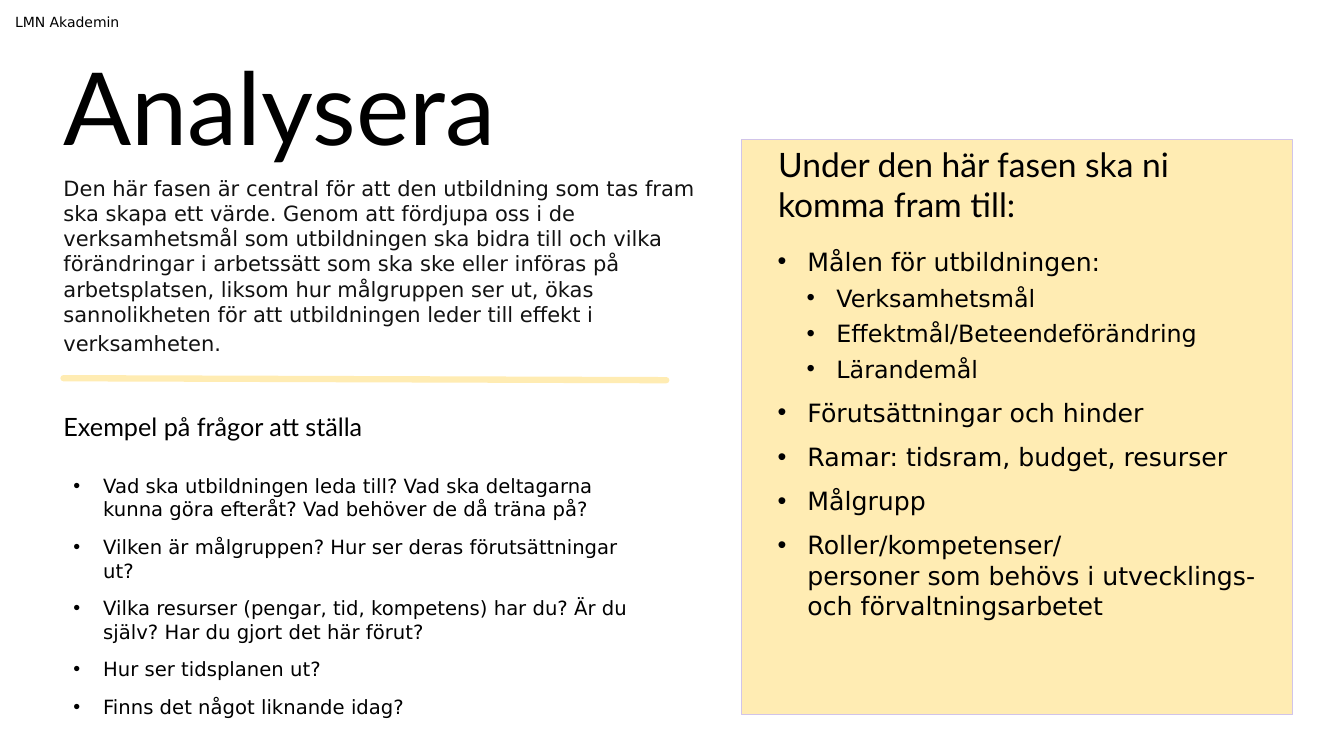
from dataclasses import dataclass

from lxml import etree
from pptx import Presentation
from pptx import util as u
from pptx.dml.color import RGBColor
from pptx.enum import shapes, text
from pptx.oxml import ns


@dataclass(frozen=True)
class Theme:
    ink: str = "000000"
    soft_ink: str = "121212"
    panel: str = "FFECB3"
    panel_edge: str = "D1C4E9"
    heading_font: str = "Lato"
    body_font: str = "DejaVu Sans"
    title: float = 72
    panel_heading: float = 24
    heading: float = 18
    result: float = 18
    sub_result: float = 17
    intro: float = 15
    question: float = 14
    label: float = 10


THEME = Theme()
NBSP = chr(160)

INTRO = (
    "Den här fasen är central för att den utbildning som tas fram ska skapa ett värde. "
    "Genom att fördjupa oss i de verksamhetsmål som utbildningen ska bidra till och vilka "
    "förändringar i arbetssätt som ska ske eller införas på arbetsplatsen, liksom hur "
    "målgruppen ser ut, ökas sannolikheten för att utbildningen leder till effekt i "
    "verksamheten."
)
# Each result is its level and its wording
RESULTS = [
    (0, "Målen för utbildningen:"),
    (1, "Verksamhetsmål"),
    (1, "Effektmål/Beteendeförändring"),
    (1, "Lärandemål"),
    (0, "Förutsättningar och hinder"),
    (0, "Ramar: tidsram, budget, resurser"),
    (0, "Målgrupp"),
    (0, "Roller/kompetenser/"
        + "personer som behövs i utvecklings-".replace(" ", NBSP)
        + " och" + NBSP + "förvaltningsarbetet"),
]
QUESTIONS = [
    (0, "Vad ska utbildningen leda till? Vad ska deltagarna kunna göra efteråt? "
        "Vad behöver de då träna på?"),
    (0, "Vilken är målgruppen? Hur ser deras förutsättningar ut?"),
    (0, "Vilka resurser (pengar, tid, kompetens) har du? Är du själv? "
        "Har du gjort det här förut?"),
    (0, "Hur ser tidsplanen ut?"),
    (0, "Finns det något liknande idag?"),
]


def apply(target, values):
    for name, value in values.items():
        setattr(target, name, value)


def lengths(*values):
    return [u.Cm(value) for value in values]


def prepare_frame(frame, side=0, top=0):
    apply(frame, {
        "word_wrap": True,
        "auto_size": text.MSO_AUTO_SIZE.NONE,
        "vertical_anchor": text.MSO_ANCHOR.TOP,
        "margin_left": u.Cm(side), "margin_right": u.Cm(side),
        "margin_top": u.Cm(top), "margin_bottom": u.Cm(top),
    })


def add_run(paragraph, wording, size, font, color=THEME.ink):
    run = paragraph.add_run()
    run.text = wording
    apply(run.font, {"size": u.Pt(size), "name": font})
    run.font.color.rgb = RGBColor.from_string(color)


def add_title(slide, wording, box):
    title = slide.shapes.title
    apply(title, dict(zip(("left", "top", "width", "height"), lengths(*box))))
    prepare_frame(title.text_frame)
    paragraph = title.text_frame.paragraphs[0]
    paragraph.alignment = text.PP_ALIGN.LEFT
    add_run(paragraph, wording, THEME.title, THEME.heading_font)


def add_text(slide, wording, box, size, font, color=THEME.ink):
    frame = slide.shapes.add_textbox(*lengths(*box)).text_frame
    prepare_frame(frame)
    add_run(frame.paragraphs[0], wording, size, font, color)
    return frame.paragraphs[0]


def add_bullets(slide, entries, box, sizes):
    frame = slide.shapes.add_textbox(*lengths(*box)).text_frame
    prepare_frame(frame, side=0.25, top=0.13)
    for index, (level, wording) in enumerate(entries):
        paragraph = frame.add_paragraph() if index else frame.paragraphs[0]
        apply(paragraph, {"level": level, "space_before": u.Pt((10, 5)[level])})
        properties = paragraph._p.get_or_add_pPr()
        properties.set("marL", str(u.Cm((0.75, 1.48)[level])))
        properties.set("indent", str(-u.Cm(0.75)))
        etree.SubElement(properties, ns.qn("a:buFont")).set("typeface", "Arial")
        etree.SubElement(properties, ns.qn("a:buChar")).set("char", "•")
        add_run(paragraph, wording, sizes[level], THEME.body_font)


def add_panel(slide, box):
    panel = slide.shapes.add_shape(shapes.MSO_SHAPE.RECTANGLE, *lengths(*box))
    panel.shadow.inherit = False
    panel.fill.solid()
    panel.fill.fore_color.rgb = RGBColor.from_string(THEME.panel)
    panel.line.color.rgb = RGBColor.from_string(THEME.panel_edge)
    panel.line.width = u.Pt(0.5)


def add_divider(slide, ends):
    divider = slide.shapes.add_connector(shapes.MSO_CONNECTOR.STRAIGHT, *lengths(*ends))
    divider.line.color.rgb = RGBColor.from_string(THEME.panel)
    divider.line.width = u.Pt(4.5)
    properties = divider._element.spPr
    properties.find(ns.qn("a:ln")).set("cap", "rnd")
    etree.SubElement(properties, ns.qn("a:effectLst"))


def main():
    deck = Presentation()
    apply(deck, {"slide_width": u.Cm(33.87), "slide_height": u.Cm(19.05)})
    slide = deck.slides.add_slide(deck.slide_layouts.get_by_name("Title Only"))

    # Phase title and introduction
    add_title(slide, "Analysera", (1.6, 1.12, 11.15, 3.07))
    add_panel(slide, (18.69, 3.51, 13.89, 14.5))
    intro = add_text(slide, INTRO, (1.6, 4.42, 15.95, 4.62),
                     THEME.intro, THEME.body_font, THEME.soft_ink)
    add_run(intro, NBSP, THEME.result, THEME.body_font)

    # Results of the phase, on the panel
    add_text(slide, "Under den här fasen ska ni komma fram till:",
             (19.61, 3.63, 12.65, 2.06), THEME.panel_heading, THEME.heading_font)
    add_bullets(slide, RESULTS, (19.35, 6.07, 12.6, 11.35),
                (THEME.result, THEME.sub_result))

    # Questions to ask
    add_text(slide, "Exempel på frågor att ställa", (1.6, 10.36, 10.49, 0.76),
             THEME.heading, THEME.heading_font)
    add_bullets(slide, QUESTIONS, (1.6, 11.81, 15.01, 6.86), (THEME.question,))
    add_divider(slide, (1.6, 9.53, 16.79, 9.58))

    # Organisation label
    add_text(slide, "LMN Akademin", (0.38, 0.33, 7.57, 0.43),
             THEME.label, THEME.body_font)

    deck.save("out.pptx")


if __name__ == "__main__":
    main()
